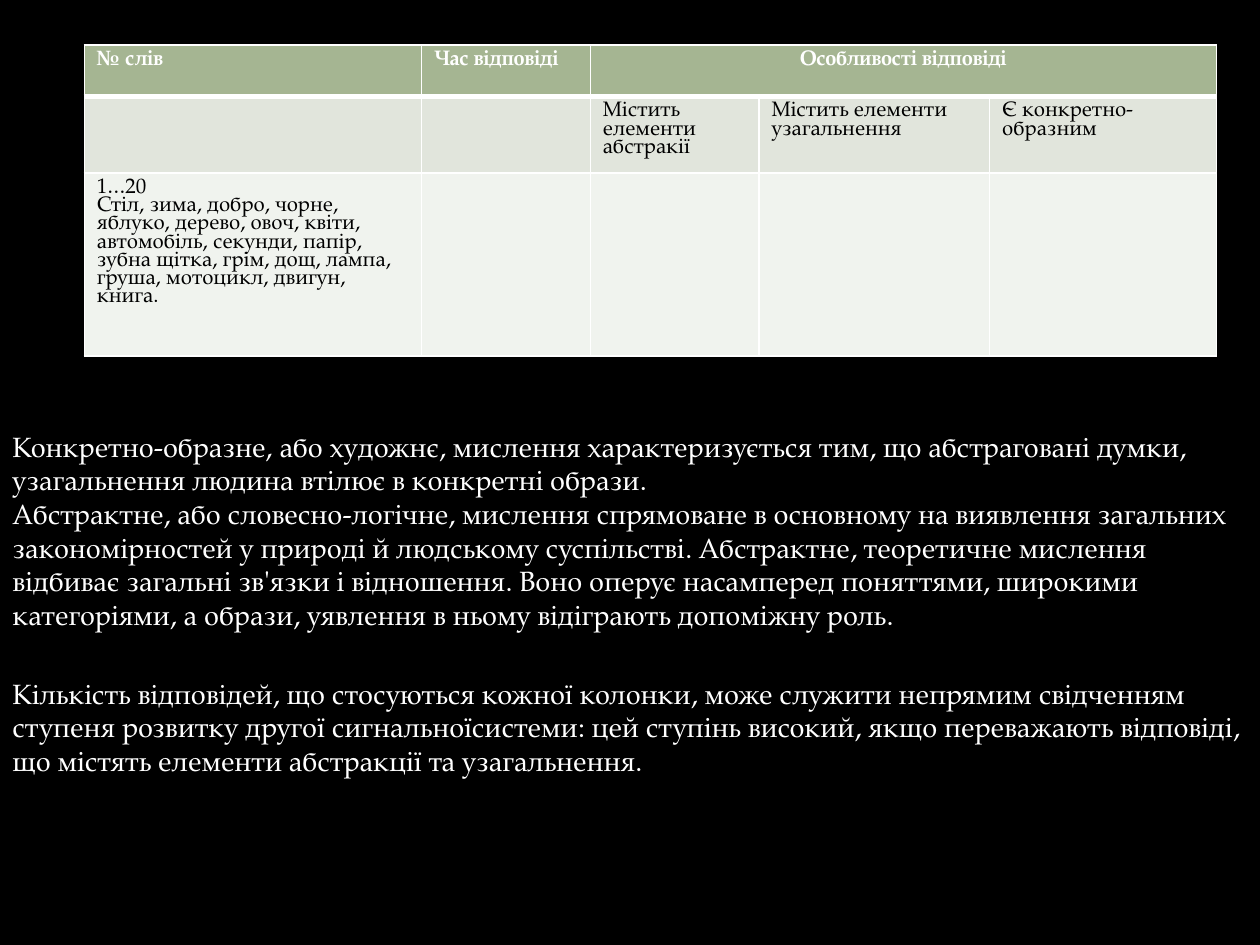
"""Build a slide with a table of word answers and notes on kinds of thinking."""
from lxml import etree
from pptx import Presentation, util as u
from pptx.dml.color import RGBColor
from pptx.enum import text as t
from pptx.oxml.ns import qn

FONT = "TeX Gyre Pagella"
WHITE, BLACK = "FFFFFF", "000000"
FILLS = ["A5B592", "E1E5DC", "F0F3EE"]
COLS = [6.8, 3.4, 3.4, 4.65, 4.57]
ROWS = [1.03, 1.55, 3.69]
WORDS = (
    "Стіл, зима, добро, чорне, яблуко, дерево, овоч, квіти, автомобіль, "
    "секунди, папір, зубна щітка, грім, дощ, лампа, груша, мотоцикл, двигун, книга."
)
CELLS = [
    ["№ слів", "Час відповіді", "Особливості відповіді", "", ""],
    ["", "", "Містить елементи абстракії", "Містить елементи узагальнення",
     "Є конкретно-образним"],
    ["1…20\n" + WORDS, "", "", "", ""],
]
KINDS = (
    "Конкретно-образне, або художнє, мислення характеризується тим, що абстраговані "
    "думки, узагальнення людина втілює в конкретні образи.\n"
    "Абстрактне, або словесно-логічне, мислення спрямоване в основному на виявлення "
    "загальних закономірностей у природі й людському суспільстві. Абстрактне, теоретичне "
    "мислення відбиває загальні зв'язки і відношення. Воно оперує насамперед поняттями, "
    "широкими категоріями, а образи, уявлення в ньому відіграють допоміжну роль."
)
RESULT = (
    "Кількість відповідей, що стосуються кожної колонки, може служити непрямим свідченням "
    "ступеня розвитку другої сигнальноїсистеми: цей ступінь високий, якщо переважають "
    "відповіді, що містять елементи абстракції та узагальнення."
)


def paint(fill, color):
    """Give a fill one solid colour."""
    fill.solid()
    fill.fore_color.rgb = RGBColor.from_string(color)


def write(frame, words, size, color, bold=False, space=None):
    """Put text in a frame, with one font for all paragraphs."""
    frame.text = words
    for para in frame.paragraphs:
        font = para.font
        font.name, font.size, font.bold = FONT, u.Pt(size), bold
        font.color.rgb = RGBColor.from_string(color)
        para.line_spacing = space


def edge(cell, top, bottom):
    """Draw white borders round a cell, with widths in points."""
    props = cell._tc.get_or_add_tcPr()
    sides = {"lnL": 1, "lnR": 1, "lnT": top, "lnB": bottom}
    for i, (side, width) in enumerate(sides.items()):
        line = etree.Element(qn("a:" + side), w=str(u.Pt(width)))
        fill = etree.SubElement(line, qn("a:solidFill"))
        etree.SubElement(fill, qn("a:srgbClr"), val=WHITE)
        props.insert(i, line)


def add_grid(slide):
    """Add the table of answers."""
    table = slide.shapes.add_table(
        len(ROWS), len(COLS), u.Cm(1.7), u.Cm(0.91),
        u.Cm(sum(COLS)), u.Cm(sum(ROWS))).table
    for col, width in zip(table.columns, COLS):
        col.width = u.Cm(width)
    for r, (row, height) in enumerate(zip(table.rows, ROWS)):
        row.height = u.Cm(height)
        head = r == 0
        for cell, words in zip(row.cells, CELLS[r]):
            paint(cell.fill, FILLS[r])
            edge(cell, 3 if r == 1 else 1, 3 if head else 1)
            write(cell.text_frame, words, 12, WHITE if head else BLACK, head, 0.85)
    span = table.cell(0, 2)
    span.merge(table.cell(0, 4))
    span.text_frame.paragraphs[0].alignment = t.PP_ALIGN.CENTER


def add_note(slide, words, top, height):
    """Add a text box as wide as the slide."""
    box = slide.shapes.add_textbox(0, u.Cm(top), u.Cm(25.4), u.Cm(height))
    frame = box.text_frame
    frame.word_wrap = True
    frame.auto_size = t.MSO_AUTO_SIZE.SHAPE_TO_FIT_TEXT
    write(frame, words, 16, WHITE)


def main():
    """Build and save the slide."""
    deck = Presentation()
    deck.slide_width, deck.slide_height = u.Cm(25.4), u.Cm(19.05)
    slide = deck.slides.add_slide(deck.slide_layouts[6])
    paint(slide.background.fill, BLACK)
    add_grid(slide)
    add_note(slide, KINDS, 8.53, 4.37)
    add_note(slide, RESULT, 13.51, 2.31)
    deck.save("out.pptx")


if __name__ == "__main__":
    main()
